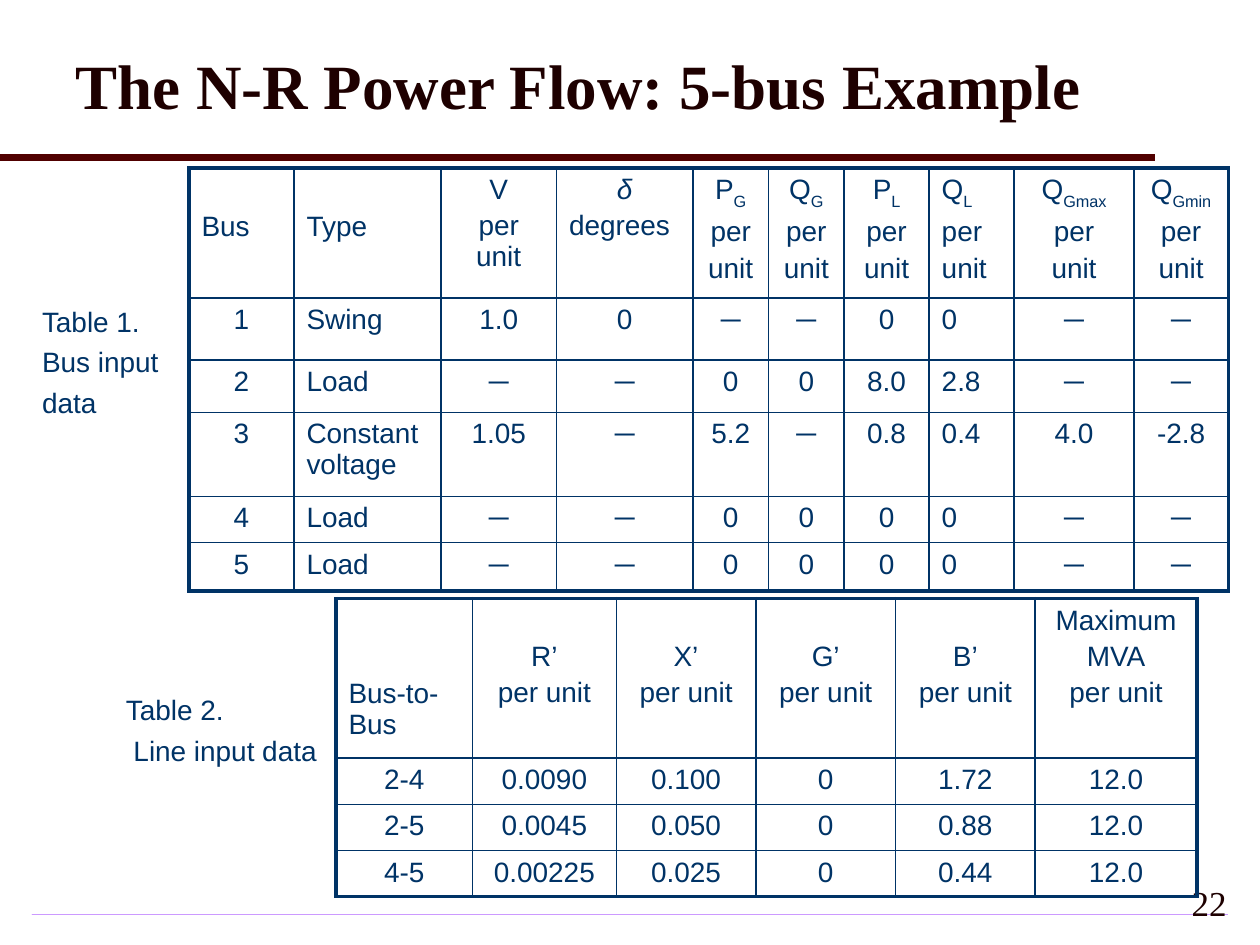
from lxml.etree import SubElement
from pptx import Presentation
from pptx.dml.color import RGBColor
from pptx.enum.shapes import MSO_CONNECTOR as Conn, MSO_SHAPE as Shape
from pptx.enum.text import MSO_ANCHOR as Anchor, MSO_AUTO_SIZE as AutoSize, PP_ALIGN as Align
from pptx.oxml import parse_xml
from pptx.oxml.ns import nsdecls, qn
from pptx.util import Inches, Pt

ALIGN = {"l": Align.LEFT, "c": Align.CENTER, "r": Align.RIGHT}


def rgb(value):
    return RGBColor.from_string(value)


def write(tf, text, font="Arial", size=16, color="003366", bold=False,
          italic=False, align="l", gap=3):
    """Fill a frame: one paragraph a line, with a subscript after "_"."""
    for i, line in enumerate(text.split("\n")):
        p = tf.add_paragraph() if i else tf.paragraphs[0]
        p.alignment = ALIGN[align]
        p.space_before = Pt(gap if i else 0)
        main, _, sub = line.partition("_")
        for part in filter(None, (main, sub)):
            r = p.add_run()
            r.text = part
            f = r.font
            f.name, f.size, f.bold = font, Pt(size), bold
            f.italic = italic or part == "δ"
            f.color.rgb = rgb(color)
            if part is sub:
                r._r.get_or_add_rPr().set("baseline", "-30000")


class Slide:
    """Style and current slide, on a grid of 120 columns by 90 rows."""
    INK, DARK, RULE = "003366", "1E0000", "500000"
    SERIF = "Times New Roman"
    THIN, THICK = 1, 2.25

    def __init__(self, prs):
        self.s = prs.slides.add_slide(prs.slide_layouts[5])
        self.unit = prs.slide_width / 120

    def at(self, *units):
        return [round(u * self.unit) for u in units]

    def title(self, text, *box):
        sp = self.s.shapes.title
        sp.left, sp.top, sp.width, sp.height = self.at(*box)
        tf = sp.text_frame
        tf.auto_size, tf.vertical_anchor = AutoSize.NONE, Anchor.MIDDLE
        write(tf, text, font=self.SERIF, size=36, color=self.DARK, bold=True)

    def rule(self, x1, y1, x2, y2, width):
        cn = self.s.shapes.add_connector(Conn.STRAIGHT, *self.at(x1, y1, x2, y2))
        cn.line.color.rgb, cn.line.width = rgb(self.RULE), Pt(width)
        SubElement(cn._element.spPr, qn("a:effectLst"))

    def gradient_bar(self, inner, outer, *box):
        sp = self.s.shapes.add_shape(Shape.RECTANGLE, *self.at(*box))
        sp.shadow.inherit = False
        sp.line.fill.background()
        sp.fill.gradient()
        for stop, color in zip(sp.fill.gradient_stops, (inner, outer)):
            stop.color.rgb = rgb(color)
        lin = sp._element.spPr.find(".//" + qn("a:lin"))
        lin.getparent().replace(lin, parse_xml(
            f'<a:path {nsdecls("a")} path="shape"><a:fillToRect '
            'l="50000" t="50000" r="50000" b="50000"/></a:path>'))

    def caption(self, text, *box, indent=0):
        tf = self.s.shapes.add_textbox(*self.at(*box)).text_frame
        tf.word_wrap = False
        tf.margin_left = tf.margin_right = tf.margin_top = tf.margin_bottom = 0
        write(tf, text, gap=4)
        if indent:
            tf.paragraphs[-1]._p.get_or_add_pPr().set("marL", str(Inches(indent)))

    def number(self, text, *box):
        tf = self.s.shapes.add_textbox(*self.at(*box)).text_frame
        tf.word_wrap, tf.vertical_anchor = True, Anchor.MIDDLE
        write(tf, text, font=self.SERIF, size=20, color=self.DARK, align="r")

    def border(self, cell, **widths):
        tcPr = cell._tc.get_or_add_tcPr()
        for side in "LRTB":
            ln = SubElement(tcPr, qn(f"a:ln{side}"), w=str(Pt(widths[side])))
            fill = SubElement(ln, qn("a:solidFill"))
            SubElement(fill, qn("a:srgbClr"), val=self.INK)

    def table(self, left, top, cols, heights, rows, head_align, body_align, drops):
        """drops: header lines left free above the text, for each column."""
        tbl = self.s.shapes.add_table(
            len(rows), len(cols),
            *self.at(left, top, sum(cols), sum(heights))).table
        tbl.first_row = tbl.horz_banding = False
        for col, w in zip(tbl.columns, self.at(*cols)):
            col.width = w
        for row, h in zip(tbl.rows, self.at(*heights)):
            row.height = h
        last_row, last_col = len(rows) - 1, len(cols) - 1
        for i, row in enumerate(rows):
            for j, text in enumerate(row):
                cell = tbl.cell(i, j)
                write(cell.text_frame, text,
                      align=(body_align if i else head_align)[j])
                if i == 0:
                    cell.margin_top = Inches(0.05 + 0.29 * drops[j])
                edges = dict(L=j == 0, R=j == last_col, T=i == 0, B=i == last_row)
                self.border(cell, **{side: self.THICK if outer else self.THIN
                                     for side, outer in edges.items()})
                cell.fill.background()
        return tbl


BUS_ROWS = [
    ["Bus", "Type", "V\nper unit", "δ\ndegrees"]
    + [f"{q}\nper\nunit" for q in ("P_G", "Q_G", "P_L", "Q_L", "Q_Gmax", "Q_Gmin")],
    ["1", "Swing", "1.0", "0", "─", "─", "0", "0", "─", "─"],
    ["2", "Load", "─", "─", "0", "0", "8.0", "2.8", "─", "─"],
    ["3", "Constant voltage", "1.05", "─", "5.2", "─", "0.8", "0.4", "4.0", "-2.8"],
    ["4", "Load", "─", "─", "0", "0", "0", "0", "─", "─"],
    ["5", "Load", "─", "─", "0", "0", "0", "0", "─", "─"],
]
LINE_ROWS = [
    ["Bus-to-Bus"] + [f"{q}\nper unit" for q in ("R’", "X’", "G’", "B’", "Maximum\nMVA")],
    ["2-4", "0.0090", "0.100", "0", "1.72", "12.0"],
    ["2-5", "0.0045", "0.050", "0", "0.88", "12.0"],
    ["4-5", "0.00225", "0.025", "0", "0.44", "12.0"],
]


def main():
    prs = Presentation()
    prs.slide_width, prs.slide_height = Inches(10), Inches(7.5)
    slide = Slide(prs)

    # Frame: footer bar, title rule, page number, title
    slide.gradient_bar("CC99FF", "F3EBFF", 3, 87, 114, 0.12)
    slide.rule(0, 15, 110, 15, 4)
    slide.number("22", 93, 83, 25, 6)
    slide.title("The N-R Power Flow: 5-bus Example", 6, 1, 108, 14)

    # Table 1: bus input data
    tbl = slide.table(18, 16, [10, 14, 11, 13, 7.2, 7.2, 8.1, 8.1, 11.4, 9],
                      [12.1, 5.9, 5, 8, 4.4, 4.6], BUS_ROWS,
                      "llccccclcc", "clccccclcc", [1, 1] + [0] * 8)
    tbl.cell(0, 3).text_frame.paragraphs[1].alignment = Align.LEFT
    slide.caption("Table 1.\nBus input\ndata", 4, 29, 11.9, 9.6)

    # Table 2: line input data
    slide.table(32, 57, [13, 13.7, 13.3, 13.3, 13.3, 15.4],
                [15.2, 4.4, 4.4, 4.4], LINE_ROWS,
                "lccccc", "cccccc", [2, 1, 1, 1, 1, 0])
    slide.caption("Table 2.\nLine input data", 12, 66, 18.2, 6.4, indent=0.06)

    prs.save("out.pptx")


if __name__ == "__main__":
    main()
